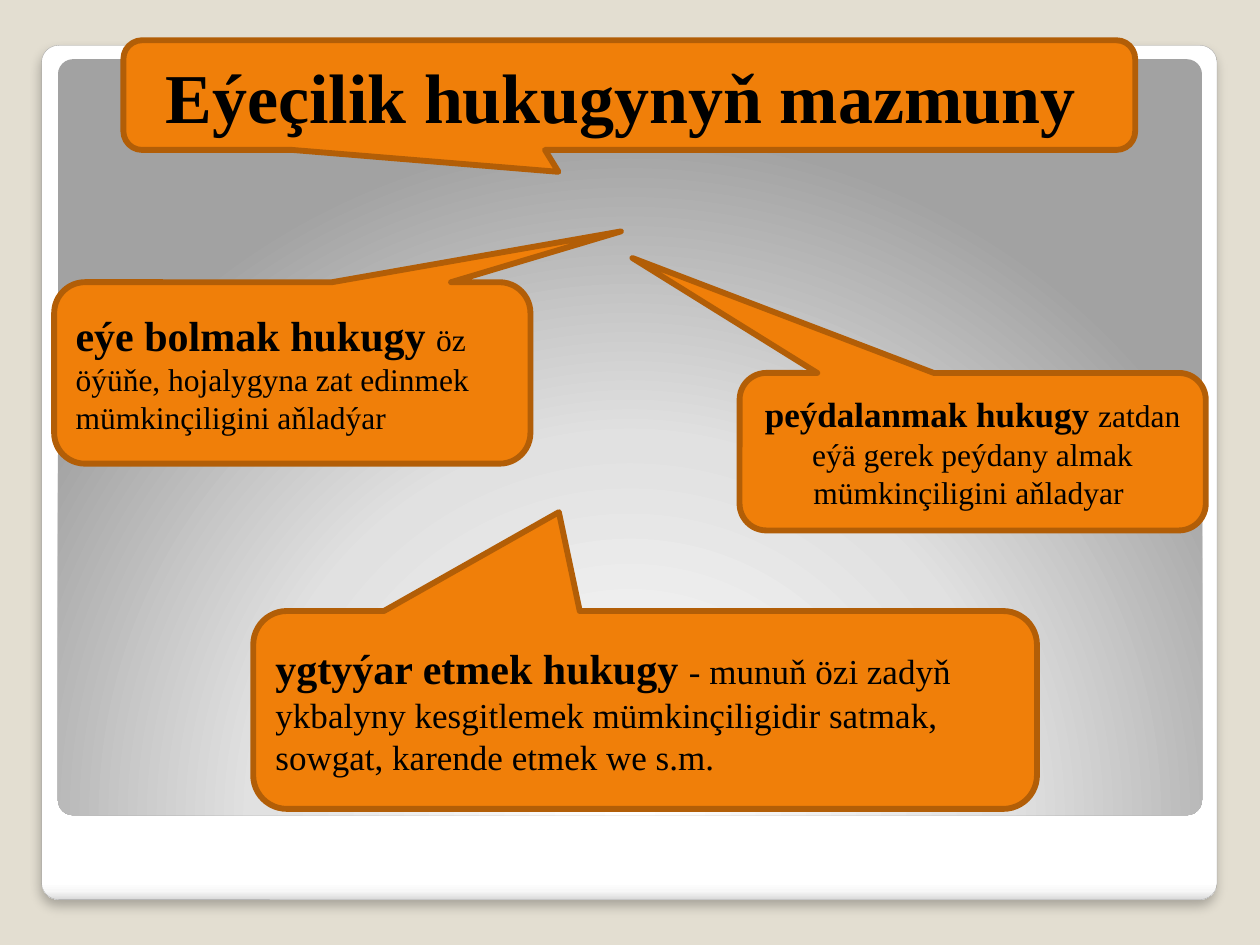
"""Build the slide on the content of ownership rights."""
from lxml.etree import SubElement
from pptx import Presentation
from pptx.dml.color import RGBColor
from pptx.enum.shapes import MSO_SHAPE
from pptx.enum.text import MSO_ANCHOR, PP_ALIGN
from pptx.oxml import parse_xml
from pptx.oxml.ns import nsdecls, qn
from pptx.util import Inches, Pt

COLORS = {
    "background": "E3DED1",
    "orange": "F07F09",
    "brown": "B25E07",
    "black": "000000",
    "frame line": "A4A4A4",
    "white": "FFFFFF",
    "near white": "F7F7F7",
    "edge": "DADADA",
    "light gray": "E1E1E1",
    "gray": "A2A2A2",
}


def color(name):
    return RGBColor.from_string(COLORS[name])


def add_panel(slide, box, stops, direction):
    panel = slide.shapes.add_shape(MSO_SHAPE.ROUNDED_RECTANGLE, *map(Inches, box))
    panel.adjustments[0] = 0.02
    panel.shadow.inherit = False
    panel.line.fill.background()
    panel.fill.background()
    properties = panel.element.spPr
    stop_xml = "".join(
        f'<a:gs pos="{position * 1000}"><a:srgbClr val="{COLORS[name]}"/></a:gs>'
        for position, name in stops
    )
    gradient = parse_xml(
        f'<a:gradFill {nsdecls("a")} rotWithShape="1">'
        f"<a:gsLst>{stop_xml}</a:gsLst>{direction}</a:gradFill>"
    )
    properties.replace(properties.find(qn("a:noFill")), gradient)
    return panel


presentation = Presentation()
presentation.slide_width = Inches(10)
presentation.slide_height = Inches(7.5)
slide = presentation.slides.add_slide(presentation.slide_layouts[6])
slide.background.fill.solid()
slide.background.fill.fore_color.rgb = color("background")

frame = add_panel(
    slide,
    (0.33, 0.36, 9.33, 6.78),
    [(0, "white"), (98, "white"), (99, "near white"), (100, "edge")],
    '<a:lin ang="5400000" scaled="0"/>',
)
frame.line.color.rgb = color("frame line")
frame.line.width = Pt(0.16)
shadow = SubElement(
    frame.element.spPr.find(qn("a:effectLst")),
    qn("a:outerShdw"),
    blurRad=str(Pt(6)),
    dist=str(Pt(4)),
    dir="5400000",
    algn="tl",
    rotWithShape="0",
)
shadow_color = SubElement(shadow, qn("a:srgbClr"), val=COLORS["black"])
SubElement(shadow_color, qn("a:alpha"), val="25000")

add_panel(
    slide,
    (0.46, 0.47, 9.08, 6),
    [(0, "white"), (55, "light gray"), (100, "gray")],
    '<a:path path="circle">'
    '<a:fillToRect l="50000" t="175000" r="50000" b="-75000"/></a:path>',
)

callouts = [
    ((0.98, 0.32, 8.03, 0.87), (-0.07, 0.7), PP_ALIGN.CENTER,
     [("Eýeçilik hukugynyň mazmuny ", 40, True)]),
    ((0.43, 2.24, 3.78, 1.44), (0.69, -0.78), PP_ALIGN.LEFT,
     [("eýe bolmak hukugy ", 24, True),
      ("öz öýüňe, hojalygyna zat edinmek mümkinçiligini aňladýar", 18, False)]),
    ((5.87, 2.96, 3.7, 1.25), (-0.73, -1.23), PP_ALIGN.CENTER,
     [("peýdalanmak hukugy ", 20, True),
      ("zatdan eýä gerek peýdany almak mümkinçiligini aňladyar ", 18, False)]),
    ((2.01, 4.85, 6.22, 1.57), (-0.11, -1), PP_ALIGN.LEFT,
     [("ygtyýar etmek hukugy ", 24, True),
      ("- munuň özi zadyň ykbalyny kesgitlemek mümkinçiligidir satmak, "
       "sowgat, karende etmek we s.m.", 20, False)]),
]

for box, pointer, alignment, runs in callouts:
    callout = slide.shapes.add_shape(
        MSO_SHAPE.ROUNDED_RECTANGULAR_CALLOUT, *map(Inches, box)
    )
    callout.adjustments[0], callout.adjustments[1] = pointer
    callout.adjustments[2] = 0.17
    callout.shadow.inherit = False
    callout.fill.solid()
    callout.fill.fore_color.rgb = color("orange")
    callout.line.color.rgb = color("brown")
    callout.line.width = Pt(3.35)
    text_frame = callout.text_frame
    text_frame.word_wrap = True
    text_frame.vertical_anchor = MSO_ANCHOR.MIDDLE
    paragraph = text_frame.paragraphs[0]
    paragraph.alignment = alignment
    for text, size, bold in runs:
        run = paragraph.add_run()
        run.text = text
        run.font.name = "Times New Roman"
        run.font.size = Pt(size)
        run.font.bold = bold
        run.font.color.rgb = color("black")

presentation.save("out.pptx")
